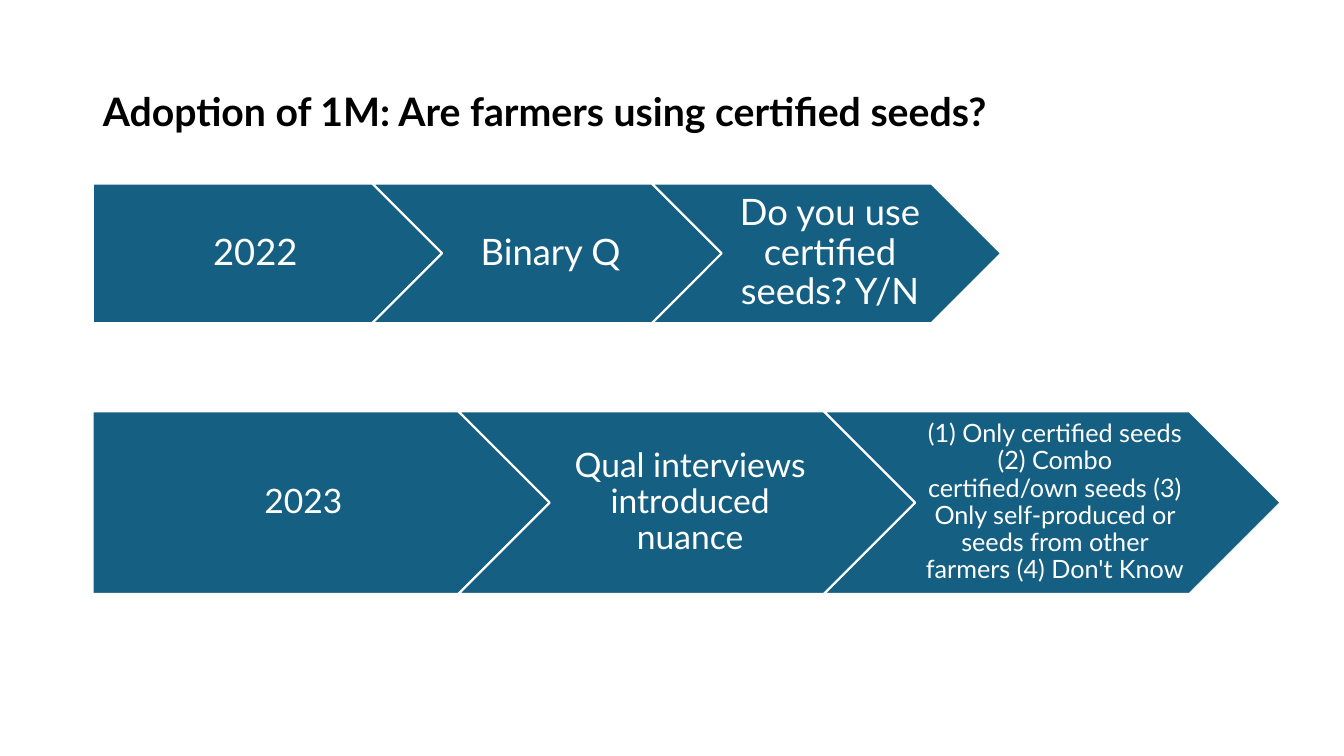
from dataclasses import dataclass

from pptx import Presentation
from pptx.dml.color import RGBColor
from pptx.enum.shapes import MSO_SHAPE
from pptx.enum.text import MSO_ANCHOR, MSO_AUTO_SIZE, PP_ALIGN
from pptx.util import Inches, Length, Pt


@dataclass(frozen=True)
class Theme:
    font: str = "Lato"
    ink: RGBColor = RGBColor(0x00, 0x00, 0x00)
    paper: RGBColor = RGBColor(0xFF, 0xFF, 0xFF)
    teal: RGBColor = RGBColor(0x15, 0x60, 0x82)
    title_size: float = 28
    large: float = 26
    medium: float = 24
    small: float = 18
    outline: float = 1.5
    line_spacing: float = 0.9


@dataclass(frozen=True)
class Step:
    text: str
    size: float


@dataclass(frozen=True)
class Process:
    top: float  # percent of slide height
    step_width: float  # percent of slide width
    steps: tuple[Step, ...]


THEME = Theme()
LEFT = 6.9  # percent of slide width
ASPECT = 0.4  # step height over step width
PITCH = 0.8  # distance between steps over step width

PROCESSES = (
    Process(24.27, 26, (
        Step("2022", THEME.large),
        Step("Binary Q", THEME.large),
        Step("Do you use certified seeds? Y/N", THEME.large),
    )),
    Process(54.4, 34, (
        Step("2023", THEME.medium),
        Step("Qual interviews introduced nuance", THEME.medium),
        Step("(1) Only certified seeds (2) Combo certified/own seeds "
             "(3) Only self-produced or seeds from other farmers "
             "(4) Don't Know", THEME.small),
    )),
)

prs = Presentation()
prs.slide_width, prs.slide_height = Inches(13.33), Inches(7.5)


def across(percent: float) -> Length:
    return Length(round(prs.slide_width * percent / 100))


def down(percent: float) -> Length:
    return Length(round(prs.slide_height * percent / 100))


def write(sp, text: str, size: float, color: RGBColor,
          align: PP_ALIGN, bold: bool = False) -> None:
    """Fill a shape with one formatted paragraph, centred vertically."""
    tf = sp.text_frame
    tf.text = text
    tf.word_wrap = True
    tf.auto_size = MSO_AUTO_SIZE.NONE
    tf.vertical_anchor = MSO_ANCHOR.MIDDLE
    p = tf.paragraphs[0]
    p.alignment = align
    p.line_spacing = THEME.line_spacing
    p.space_before = Pt(0)
    font = p.runs[0].font
    font.name, font.size, font.bold = THEME.font, Pt(size), bold
    font.color.rgb = color


def draw_process(s, process: Process) -> None:
    """Draw a pentagon followed by interlocking chevrons."""
    width = across(process.step_width)
    for i, step in enumerate(process.steps):
        sp = s.shapes.add_shape(
            MSO_SHAPE.CHEVRON if i else MSO_SHAPE.PENTAGON,
            across(LEFT + i * PITCH * process.step_width),
            down(process.top), width, round(width * ASPECT))
        sp.shadow.inherit = False
        sp.fill.solid()
        sp.fill.fore_color.rgb = THEME.teal
        sp.line.color.rgb = THEME.paper
        sp.line.width = Pt(THEME.outline)
        write(sp, step.text, step.size, THEME.paper, PP_ALIGN.CENTER)

        # Margins grow with the type size
        tf = sp.text_frame
        tf.margin_left = Pt(step.size * (0.3 if i else 0.4))
        tf.margin_right = Pt(step.size * 0.1)
        tf.margin_top = tf.margin_bottom = Pt(step.size * 0.2)


def main() -> None:
    s = prs.slides.add_slide(prs.slide_layouts[5])

    # Title
    title = s.shapes.title
    title.left, title.top = across(LEFT), down(5.33)
    title.width, title.height = across(86.25), down(19.33)
    write(title, "Adoption of 1M: Are farmers using certified seeds?",
          THEME.title_size, THEME.ink, PP_ALIGN.LEFT, bold=True)

    # One row of arrows per survey year
    for process in PROCESSES:
        draw_process(s, process)

    prs.save("out.pptx")


if __name__ == "__main__":
    main()
